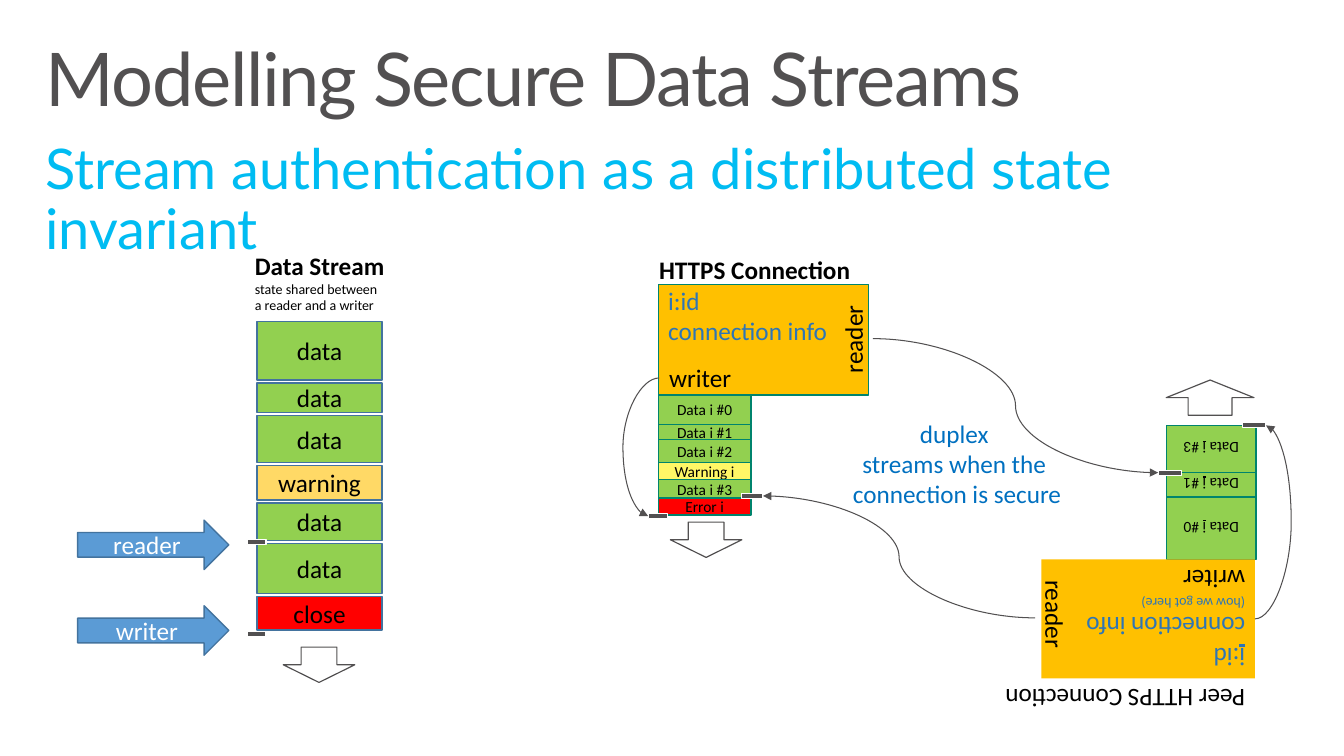
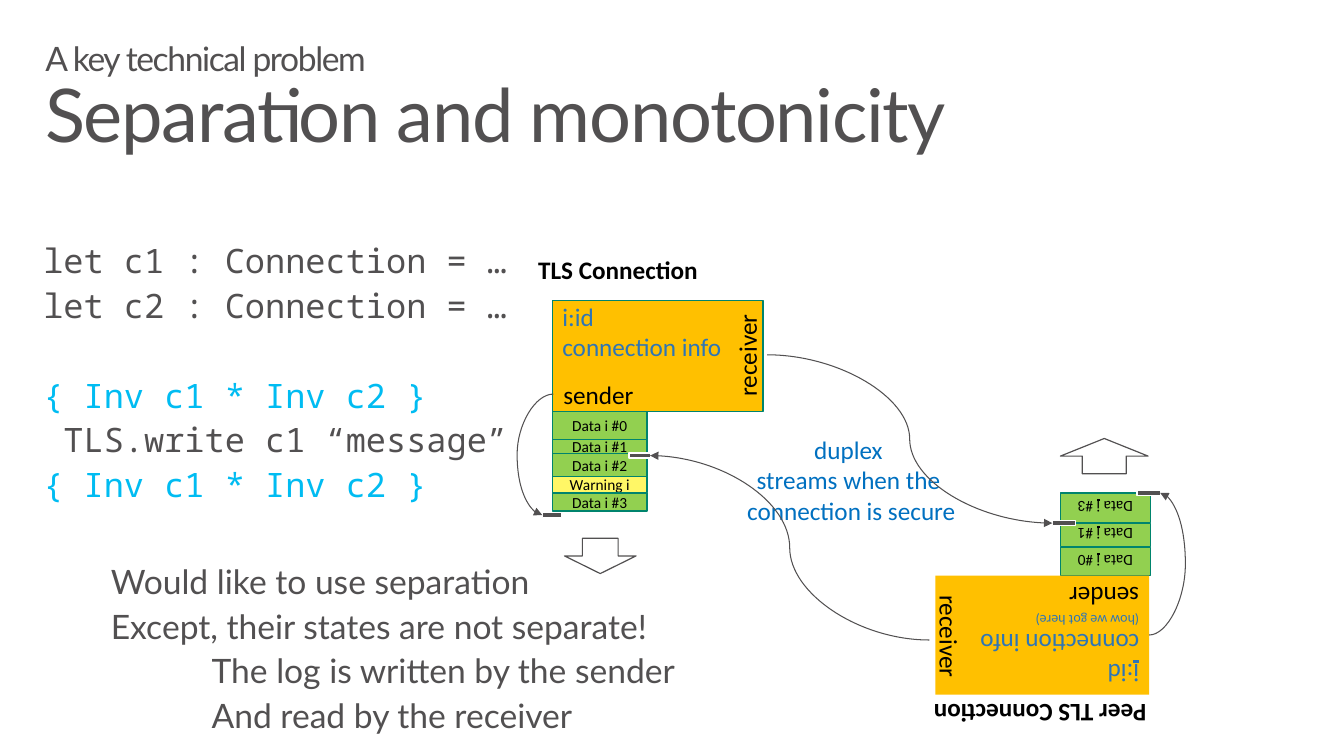
from dataclasses import dataclass

from lxml import etree
from pptx import Presentation
from pptx.dml.color import RGBColor
from pptx.enum.shapes import MSO_CONNECTOR, MSO_SHAPE as Preset
from pptx.enum.text import MSO_ANCHOR as Anchor, MSO_AUTO_SIZE as AutoSize, PP_ALIGN as Align
from pptx.oxml.ns import qn
from pptx.util import Inches, Pt

# All positions and sizes are columns and rows of a grid with square cells.
CELL = Inches(0.1)
COLUMNS, ROWS = 133.33, 75
COLORS = {
    "ink": "525051", "cyan": "00BCF2", "black": "000000", "white": "FFFFFF",
    "green": "92D050", "sand": "FFD966", "yellow": "FFF766", "red": "FF0000",
    "amber": "FFC000", "steel": "43739E", "teal": "00846D",
    "sky": "5B9BD5", "info": "2E75B6", "link": "0070C0",
}
TITLE = dict(font="Lato", color="ink", margins=(1.6, 1), spacing=0.9, grow=False)
BODY = dict(size=24, color="ink", margins=(2, 1.6), spacing=0.9, after=6)
MARK_HEIGHT = 0.5


def cells(*values):
    return [round(value * CELL) for value in values]


def rgb(name):
    return RGBColor.from_string(COLORS[name])


def add_span(para, words, font="Calibri", size=18, color="black", bold=False,
             underline=False, tracking=0):
    span = para.add_run()
    span.text = words
    span.font.name, span.font.size = font, Pt(size)
    span.font.color.rgb = rgb(color)
    span.font.bold, span.font.underline = bold, underline
    if tracking:
        span.font._element.set("spc", str(round(tracking * 100)))


def write(box, lines, align=Align.LEFT, anchor=Anchor.TOP, margins=(1, 0.5), wrap=True,
          grow=True, **style):
    """Fill a box; a line is a string, or (string or spans, its own format)."""
    frame = box.text_frame
    frame.word_wrap, frame.vertical_anchor = wrap, anchor
    frame.auto_size = AutoSize.SHAPE_TO_FIT_TEXT if grow else AutoSize.NONE
    frame.margin_left = frame.margin_right = cells(margins[0])[0]
    frame.margin_top = frame.margin_bottom = cells(margins[1])[0]
    for index, line in enumerate(lines):
        content, own = (line, {}) if isinstance(line, str) else line
        look = {**style, **own}
        para = frame.add_paragraph() if index else frame.paragraphs[0]
        para.alignment = align
        para.line_spacing = look.pop("spacing", 1.0)
        para.space_before = Pt(look.pop("before", 0))
        para.space_after = Pt(look.pop("after", 0))
        indent = look.pop("indent", 0)
        if indent:
            para._p.get_or_add_pPr().set("marL", str(cells(indent)[0]))
        spans = [(content, {})] if isinstance(content, str) else content
        for words, change in spans:
            add_span(para, words, **{**look, **change})


def add_text(slide, at, lines, turn=0, **style):
    box = slide.shapes.add_textbox(*cells(*at))
    box.rotation = turn
    write(box, lines, **style)


def add_block(slide, at, fill, line=None, weight=0.85, preset=Preset.RECTANGLE, turn=0):
    block = slide.shapes.add_shape(preset, *cells(*at))
    block.shadow.inherit = False
    block.rotation = turn
    block.fill.solid()
    block.fill.fore_color.rgb = rgb(fill)
    if line:
        block.line.color.rgb = rgb(line)
        block.line.width = Pt(weight)
    else:
        block.line.fill.background()
    return block


def add_label_block(slide, at, words, fill, line, weight=0.85, size=18, color="black", **shape):
    block = add_block(slide, at, fill, line, weight, **shape)
    write(block, [(words, {})], align=Align.CENTER, anchor=Anchor.MIDDLE, grow=False,
          size=size, color=color)


def add_stack(slide, left, start, width, records, gap=0, upward=False, **look):
    """Pile records (words, fill, height) from start; return each one's far edge."""
    edges, edge = [], start
    for words, fill, height in records:
        top = edge - height if upward else edge
        add_label_block(slide, (left, top, width, height), words, fill, **look)
        edges.append(top if upward else top + height)
        edge = edges[-1] + (-gap if upward else gap)
    return edges


def add_mark(slide, left, middle, width):
    add_block(slide, (left, middle - MARK_HEIGHT / 2, width, MARK_HEIGHT), "ink", "white")


def add_flow_arrow(slide, left, top, width, preset):
    add_block(slide, (left, top, width, 3.5), "white", "ink", preset=preset)


def add_curve(slide, start, end, bend):
    """Draw a curved arrow that turns at column bend."""
    curve = slide.shapes.add_connector(MSO_CONNECTOR.CURVE, *cells(*start, *end))
    curve.line.color.rgb = rgb("ink")
    curve.line.width = Pt(0.75)
    etree.SubElement(curve.line._get_or_add_ln(), qn("a:tailEnd"), type="triangle")
    properties = curve._element.spPr
    etree.SubElement(properties, qn("a:effectLst"))
    share = (bend - start[0]) / (end[0] - start[0])
    adjustments = properties.find(qn("a:prstGeom")).get_or_add_avLst()
    etree.SubElement(adjustments, qn("a:gd"), name="adj1", fmla=f"val {round(share * 100000)}")


@dataclass
class Duplex:
    """What differs between the two drawings of a connection and its peer."""
    left: float
    top: float
    protocol: str
    heading: tuple
    peer_heading: tuple
    peer_bold: bool
    writer: str
    reader: str
    reader_width: float
    peer_reader_middle: float
    log_width: float
    log: list
    peer_heights: tuple
    peer_gap: float
    read_mark: tuple
    end_mark_middle: float
    down_arrow_top: float
    up_arrow_top: float


def add_duplex(slide, d):
    left, top = d.left, d.top
    peer_left, peer_top = left + 38, top + 27.3
    edge = dict(line="teal", size=11)

    add_block(slide, (left, top, 20.9, 11), "amber", "teal")
    add_text(slide, (left, top - 0.4, 20.1, 10.1), ["i:id", "connection info"], color="info")
    add_text(slide, d.heading, [f"{d.protocol} Connection"], wrap=False, bold=True)
    add_stack(slide, left, top + 11, d.log_width, d.log, **edge)

    peer_log = [([("Data ", {}), ("i", {"underline": True}), (f" #{number}", {})], "green", height)
                for number, height in zip((0, 1, 3), d.peer_heights)]
    _, peer_read, peer_end = add_stack(slide, peer_left + 12.4, peer_top, 8.9, peer_log,
                                       gap=d.peer_gap, upward=True, turn=180, **edge)
    peer = add_block(slide, (peer_left, peer_top, 21.2, 11.8), "amber", turn=180)
    write(peer, [([("i", {"underline": True}), (":id", {})], {}), "connection info",
                 ("(how we got here)", {"size": 10}), (d.writer, {"color": "black"})],
          color="info")
    add_text(slide, d.peer_heading, [f"Peer {d.protocol} Connection"], turn=180, wrap=False,
             bold=d.peer_bold)

    for center, middle, width, turn in (
            (left + 19.3, top + 5.4, d.reader_width, 270),
            (peer_left + 1.4, d.peer_reader_middle, d.reader_width + 0.6, 90)):
        add_text(slide, (center - width / 2, middle - 2, width, 4), [d.reader], turn=turn,
                 wrap=False)
    add_text(slide, (left + 0.1, top + 7.3, 9, 4), [d.writer], wrap=False)
    add_text(slide, (left + 18.2, top + 12.8, 22.9, 10.1),
             ["duplex ", "streams when the ", "connection is secure"],
             align=Align.CENTER, wrap=False, color="link")

    read_left, read_middle = d.read_mark
    peer_read_left, peer_end_left = peer_left + 11.6, peer_left + 20
    for mark in ((peer_end_left, peer_end, 2.3), (peer_read_left, peer_read, 2.3),
                 (read_left, read_middle, 2.1), (left - 1, d.end_mark_middle, 1.9)):
        add_mark(slide, *mark)
    add_flow_arrow(slide, left + 1.2, d.down_arrow_top, 7.1, Preset.DOWN_ARROW)
    add_flow_arrow(slide, peer_left + 12.4, d.up_arrow_top, 8.7, Preset.UP_ARROW)

    outgoing, incoming = left + 21.3, peer_left - 0.6
    read_right = read_left + 2.1
    add_curve(slide, (outgoing, top + 5.4), (peer_read_left, peer_read),
              (outgoing + peer_read_left) / 2)
    add_curve(slide, (incoming, d.peer_reader_middle), (read_right, read_middle),
              (incoming + read_right) / 2)
    add_curve(slide, (left + 0.1, top + 9.3), (left - 1, d.end_mark_middle), left - 3.5)
    add_curve(slide, (peer_left + 21.2, peer_top + 5.9), (peer_end_left + 2.3, peer_end),
              peer_left + 24.8)


def add_title(slide, lines):
    add_text(slide, (2.9, 3.2, 127.5, 9.8), lines, size=52.9, tracking=-1, **TITLE)


def add_data_stream(slide):
    add_text(slide, (24.3, 24.3, 15, 7.4),
             [("Data Stream", {"size": 18, "bold": True}), "state shared between",
              "a reader and a writer"], wrap=False, size=10)
    records = [("data", "green", 5.8), ("data", "green", 2.9), ("data", "green", 4.7),
               ("warning", "sand", 3.4), ("data", "green", 3.7), ("data", "green", 5),
               ("close", "red", 3.3)]
    add_stack(slide, 25.5, 31.9, 12.4, records, gap=0.3, line="steel", weight=1)
    for words, top, mark in (("reader", 51.6, 53.8), ("writer", 60.1, 62.9)):
        add_label_block(slide, (7.7, top, 15, 4.9), words, "sky", "steel", 1, color="white",
                        preset=Preset.RIGHT_ARROW)
        add_mark(slide, 24.5, mark, 1.9)
    add_flow_arrow(slide, 28.1, 64.2, 7.1, Preset.DOWN_ARROW)


def build_streams(slide):
    add_title(slide, ["Modelling Secure Data Streams"])
    add_text(slide, (2.9, 13, 127.4, 8.1),
             ["Stream authentication as a distributed state invariant"],
             size=40, **{**TITLE, "color": "cyan"})
    add_data_stream(slide)
    add_duplex(slide, Duplex(
        left=65.3, top=28.2, protocol="HTTPS", heading=(64.4, 24.7, 21.1, 4),
        peer_heading=(98.4, 67.4, 26.1, 4), peer_bold=False, writer="writer", reader="reader",
        reader_width=8.8, peer_reader_middle=61.3, log_width=9.2,
        log=[("Data i #0", "green", 2.9), ("Data i #1", "green", 1.5),
             ("Data i #2", "green", 2.3), ("Warning i", "yellow", 1.7),
             ("Data i #3", "green", 1.8), ("Error i", "red", 1.7)],
        peer_heights=(6.2, 2.4, 4.7), peer_gap=0, read_mark=(73.6, 49.2),
        end_mark_middle=51.2, down_arrow_top=51.8, up_arrow_top=37.7))


def build_separation(slide):
    add_title(slide, [("A key technical problem", {"size": 24}), "Separation and monotonicity"])
    invariant = "{ Inv c1 * Inv c2 }"
    add_text(slide, (2.3, 22.7, 59.7, 29.2),
             ["let c1 : Connection = …", "let c2 : Connection = …",
              (invariant, {"color": "cyan", "before": 32}), " TLS.write c1 “message”",
              (invariant, {"color": "cyan"})], font="Noto Sans Mono", **BODY)
    add_text(slide, (9, 54.5, 71.5, 20.3),
             ["Would like to use separation", "Except, their states are not separate!",
              ("The log is written by the sender", {"indent": 10}),
              ("And read by the receiver", {"indent": 10})], font="Lato", **BODY)
    add_duplex(slide, Duplex(
        left=54.8, top=29.8, protocol="TLS", heading=(52.4, 24.7, 18, 4),
        peer_heading=(91.4, 68.9, 23.3, 4), peer_bold=True, writer="sender", reader="receiver",
        reader_width=10.3, peer_reader_middle=63.5, log_width=9.4,
        log=[("Data i #0", "green", 2.8), ("Data i #1", "green", 1.4),
             ("Data i #2", "green", 2.3), ("Warning i", "yellow", 1.6),
             ("Data i #3", "green", 1.8)],
        peer_heights=(2.8, 2.3, 2.9), peer_gap=0.1, read_mark=(62.4, 45.2),
        end_mark_middle=51.1, down_arrow_top=53.4, up_arrow_top=43.5))


def main():
    deck = Presentation()
    deck.slide_width, deck.slide_height = cells(COLUMNS, ROWS)
    for build in (build_streams, build_separation):
        build(deck.slides.add_slide(deck.slide_layouts[6]))
    deck.save("out.pptx")


if __name__ == "__main__":
    main()
